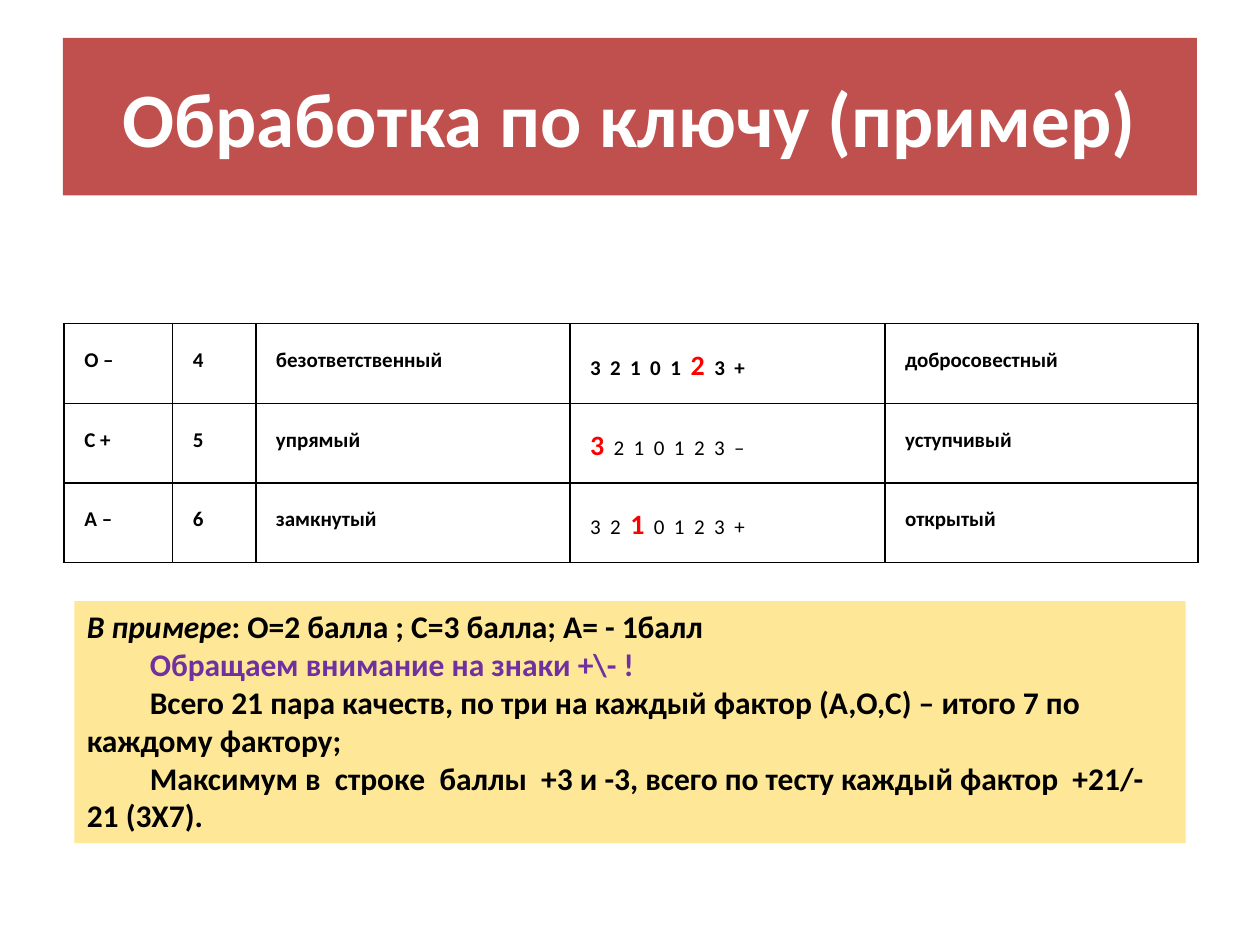
from lxml.etree import SubElement
from pptx import Presentation
from pptx.dml.color import RGBColor
from pptx.enum.shapes import MSO_SHAPE
from pptx.enum.text import MSO_ANCHOR, PP_ALIGN
from pptx.oxml.ns import qn
from pptx.util import Pt

FONT = "Calibri"
WHITE = RGBColor(0xFF, 0xFF, 0xFF)
BLACK = RGBColor(0x00, 0x00, 0x00)
BRICK = RGBColor(0xC0, 0x50, 0x4D)
CREAM = RGBColor(0xFE, 0xE8, 0x98)
RED = RGBColor(0xFF, 0x00, 0x00)
PURPLE = RGBColor(0x70, 0x30, 0xA0)

SCALE = "3210123"
GAP = "  "
COLUMN_WIDTHS = (62, 47.5, 179.5, 180, 179)
ROW_HEIGHT = 45
QUALITY_PAIRS = [
    ("О –", "4", "безответственный", (5, "+", True), "добросовестный"),
    ("С +", "5", "упрямый", (0, "–", False), "уступчивый"),
    ("А –", "6", "замкнутый", (2, "+", False), "открытый"),
]
NOTES = [
    ("Обращаем внимание на знаки +\\- !", PURPLE),
    ("Всего 21 пара качеств, по три на каждый фактор (А,О,С) – итого 7 по каждому фактору;", BLACK),
    ("Максимум в  строке  баллы  +3 и -3, всего по тесту каждый фактор  +21/-21 (3Х7).", BLACK),
]


def add_span(para, text, size, color=BLACK, bold=True, italic=False):
    span = para.add_run()
    span.text = text
    span.font.name = FONT
    span.font.size = Pt(size)
    span.font.color.rgb = color
    span.font.bold = bold
    span.font.italic = italic


def add_panel(page, left, top, width, height, color, anchor):
    panel = page.shapes.add_shape(
        MSO_SHAPE.RECTANGLE, Pt(left), Pt(top), Pt(width), Pt(height))
    panel.shadow.inherit = False
    panel.fill.solid()
    panel.fill.fore_color.rgb = color
    panel.line.fill.background()
    panel.text_frame.word_wrap = True
    panel.text_frame.vertical_anchor = anchor
    return panel.text_frame


def add_title(page):
    frame = add_panel(page, 36, 21.6, 648, 90, BRICK, MSO_ANCHOR.MIDDLE)
    para = frame.paragraphs[0]
    para.alignment = PP_ALIGN.CENTER
    add_span(para, "Обработка по ключу (пример)", 44, WHITE)


def set_borders(cell):
    properties = cell._tc.get_or_add_tcPr()
    for position, side in enumerate(("lnL", "lnR", "lnT", "lnB")):
        line = SubElement(properties, qn(f"a:{side}"), w=str(Pt(1)))
        fill = SubElement(line, qn("a:solidFill"))
        SubElement(fill, qn("a:srgbClr"), val=str(BLACK))
        properties.insert(position, line)


def write_scale(para, chosen, sign, bold):
    before = "".join(mark + GAP for mark in SCALE[:chosen])
    after = "".join(GAP + mark for mark in SCALE[chosen + 1:] + sign)
    if before:
        add_span(para, before, 12, bold=bold)
    add_span(para, SCALE[chosen], 16, RED)
    add_span(para, after, 12, bold=bold)


def fill_cell(cell, content):
    cell.fill.solid()
    cell.fill.fore_color.rgb = WHITE
    cell.margin_left = cell.margin_right = Pt(11.5)
    cell.margin_top = cell.margin_bottom = Pt(11.5)
    set_borders(cell)
    para = cell.text_frame.paragraphs[0]
    para.line_spacing = 1.15
    if isinstance(content, tuple):
        write_scale(para, *content)
    else:
        add_span(para, content, 12)


def add_key_table(page):
    table = page.shapes.add_table(
        len(QUALITY_PAIRS), len(COLUMN_WIDTHS), Pt(36.7), Pt(185),
        Pt(sum(COLUMN_WIDTHS)), Pt(ROW_HEIGHT * len(QUALITY_PAIRS))).table
    table.first_row = False
    table.horz_banding = False
    for column, width in zip(table.columns, COLUMN_WIDTHS):
        column.width = Pt(width)
    for row, contents in zip(table.rows, QUALITY_PAIRS):
        row.height = Pt(ROW_HEIGHT)
        for cell, content in zip(row.cells, contents):
            fill_cell(cell, content)


def add_notes(page):
    frame = add_panel(page, 42.5, 343.5, 635, 138.3, CREAM, MSO_ANCHOR.TOP)
    para = frame.paragraphs[0]
    para.alignment = PP_ALIGN.LEFT
    add_span(para, "В примере", 18, italic=True)
    add_span(para, ": О=2 балла ; С=3 балла; А= - 1балл", 18)
    for text, color in NOTES:
        para = frame.add_paragraph()
        para.alignment = PP_ALIGN.LEFT
        para._p.get_or_add_pPr().set("indent", str(Pt(36)))
        add_span(para, text, 18, color)


def main():
    deck = Presentation()
    deck.slide_width = Pt(720)
    deck.slide_height = Pt(540)
    page = deck.slides.add_slide(deck.slide_layouts[6])
    add_title(page)
    add_key_table(page)
    add_notes(page)
    deck.save("out.pptx")


if __name__ == "__main__":
    main()
